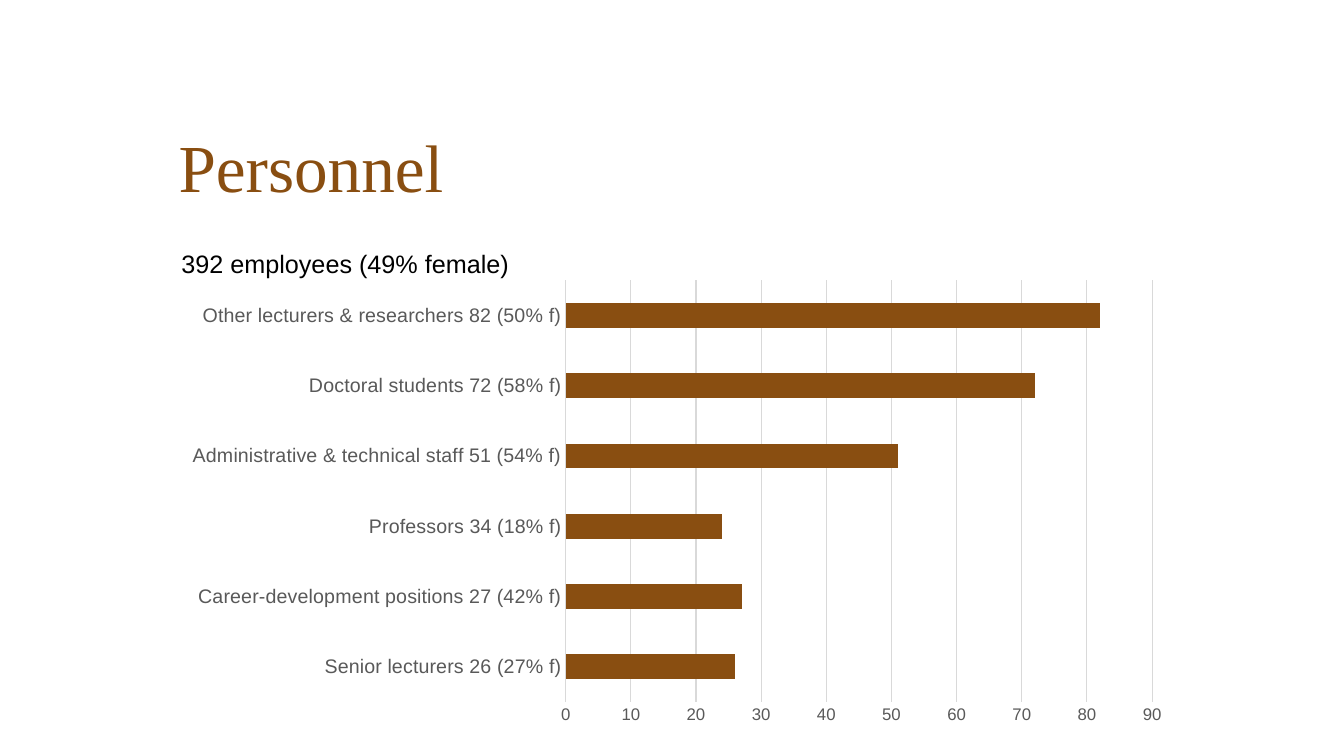
from dataclasses import dataclass

from lxml import etree
from pptx import Presentation
from pptx.chart.data import CategoryChartData
from pptx.dml.color import RGBColor
from pptx.enum.chart import XL_CHART_TYPE, XL_TICK_MARK
from pptx.enum.text import MSO_ANCHOR
from pptx.oxml.ns import qn
from pptx.util import Cm, Pt

BAR_CLUSTERED = XL_CHART_TYPE.BAR_CLUSTERED
NO_TICK = XL_TICK_MARK.NONE
TOP = MSO_ANCHOR.TOP
BOTTOM = MSO_ANCHOR.BOTTOM

STAFF = {
    "Senior lecturers 26 (27% f)": 26,
    "Career-development positions 27 (42% f)": 27,
    "Professors 34 (18% f)": 24,
    "Administrative & technical staff 51 (54% f)": 51,
    "Doctoral students 72 (58% f)": 72,
    "Other lecturers & researchers 82 (50% f)": 82,
}


@dataclass(frozen=True)
class Theme:
    brown: RGBColor = RGBColor(0x89, 0x4E, 0x11)
    black: RGBColor = RGBColor(0, 0, 0)
    label: RGBColor = RGBColor(0x59, 0x59, 0x59)
    grid: RGBColor = RGBColor(0xD9, 0xD9, 0xD9)
    heading_font: str = "Times New Roman"
    body_font: str = "Arial"
    title_size: int = 48
    body_size: int = 18
    category_size: int = 14
    value_size: int = 12
    chart_size: int = 10
    line_width: float = 0.75


class PersonnelSlide:
    def __init__(self, deck, theme):
        self.theme = theme
        self.page = deck.slides.add_slide(deck.slide_layouts[6])

    def style_font(self, font, name, size, color):
        font.name = name
        font.size = Pt(size)
        font.color.rgb = color

    def style_line(self, line):
        line.color.rgb = self.theme.grid
        line.width = Pt(self.theme.line_width)

    def add_text(self, text, place, font, size, color, margins, anchor, spacing=1.0):
        frame = self.page.shapes.add_textbox(*map(Cm, place)).text_frame
        frame.word_wrap = True
        frame.vertical_anchor = anchor
        frame.margin_left, frame.margin_top, frame.margin_right, frame.margin_bottom = map(Cm, margins)
        para = frame.paragraphs[0]
        para.line_spacing = spacing
        span = para.add_run()
        span.text = text
        self.style_font(span.font, font, size, color)

    def add_bars(self, values, place, plot_area):
        theme = self.theme
        data = CategoryChartData()
        data.categories = list(values)
        data.add_series("Series 1", list(values.values()))
        chart = self.page.shapes.add_chart(BAR_CLUSTERED, *map(Cm, place), data).chart
        chart.has_legend = False
        chart.has_title = False
        self.style_font(chart.font, theme.body_font, theme.chart_size, theme.black)

        plot = chart.plots[0]
        plot.gap_width = 182
        plot.vary_by_categories = False
        fill = plot.series[0].format.fill
        fill.solid()
        fill.fore_color.rgb = theme.brown

        sizes = (theme.category_size, theme.value_size)
        for axis, size in zip((chart.category_axis, chart.value_axis), sizes):
            axis.major_tick_mark = NO_TICK
            axis.minor_tick_mark = NO_TICK
            self.style_font(axis.tick_labels.font, theme.body_font, size, theme.label)
        self.style_line(chart.category_axis.format.line)

        value_axis = chart.value_axis
        value_axis.minimum_scale = 0
        value_axis.maximum_scale = 90
        value_axis.major_unit = 10
        value_axis.format.line.fill.background()
        value_axis.has_major_gridlines = True
        self.style_line(value_axis.major_gridlines.format.line)
        self.place_plot(chart, plot_area)

    def place_plot(self, chart, plot_area):
        area = chart.element.find(".//" + qn("c:plotArea"))
        for old_layout in area.findall(qn("c:layout")):
            area.remove(old_layout)
        layout = etree.Element(qn("c:layout"))
        area.insert(0, layout)
        manual = etree.SubElement(layout, qn("c:manualLayout"))
        settings = {"layoutTarget": "inner", "xMode": "edge", "yMode": "edge"}
        settings.update(zip("xywh", plot_area))
        for name, value in settings.items():
            etree.SubElement(manual, qn("c:" + name)).set("val", str(value))


def main():
    deck = Presentation()
    deck.slide_width = Cm(33.87)
    deck.slide_height = Cm(19.05)
    theme = Theme()
    slide = PersonnelSlide(deck, theme)
    slide.add_text("Personnel", (4.5, 1, 24.5, 5), theme.heading_font, theme.title_size,
                   theme.brown, (0, 0, 0, 0.79), BOTTOM, 0.9)
    slide.add_bars(STAFF, (4.32, 6.83, 25.48, 11.68), (0.39, 0.02, 0.58, 0.91))
    slide.add_text("392 employees (49% female)", (4.32, 6.12, 12.4, 1.02), theme.body_font,
                   theme.body_size, theme.black, (0.25, 0.13, 0.25, 0.13), TOP)
    deck.save("out.pptx")


if __name__ == "__main__":
    main()
